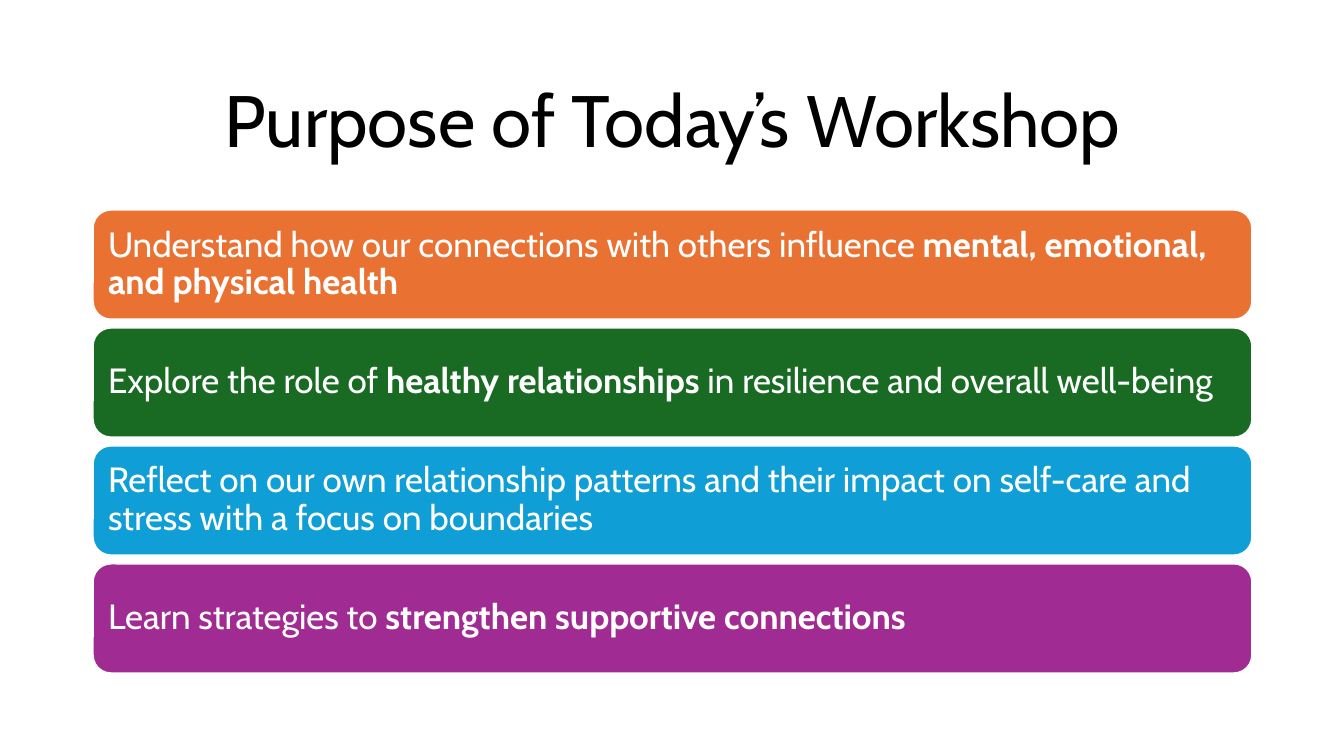
from pptx import Presentation
from pptx.dml.color import RGBColor
from pptx.enum.shapes import MSO_SHAPE
from pptx.enum.text import MSO_ANCHOR, PP_ALIGN
from pptx.util import Pt

PX = 9144  # 100 px to the inch
ROUNDED = MSO_SHAPE.ROUNDED_RECTANGLE
MIDDLE = MSO_ANCHOR.MIDDLE
LEFT, CENTER = PP_ALIGN.LEFT, PP_ALIGN.CENTER
COLORS = {
    "black": "000000",
    "white": "FFFFFF",
    "orange": "E97132",
    "green": "196B24",
    "blue": "0F9ED5",
    "purple": "A02B93",
}
MARGIN, WIDTH = 92, 1150
FIRST_TOP, BAR_HEIGHT, BAR_STEP = 208, 109, 117

# Each purpose: bar colour, then (text, bold) spans
PURPOSES = [
    ("orange", [("Understand how our connections with others influence ", False),
                ("mental, emotional, and physical health", True)]),
    ("green", [("Explore the role of ", False),
               ("healthy relationships", True),
               (" in resilience and overall well-being", False)]),
    ("blue", [("Reflect on our own relationship patterns and their impact on "
               "self-care and stress with a focus on boundaries", False)]),
    ("purple", [("Learn strategies to ", False),
                ("strengthen supportive connections", True)]),
]


def rgb(name):
    return RGBColor.from_string(COLORS[name])


def write_text(box, spans, size, color, align):
    """Fill the box with one paragraph of (text, bold) spans."""
    frame = box.text_frame
    frame.word_wrap = True
    frame.vertical_anchor = MIDDLE
    frame.margin_left = frame.margin_right = 10 * PX
    frame.margin_top = frame.margin_bottom = 5 * PX
    para = frame.paragraphs[0]
    para.alignment = align
    para.line_spacing = 0.9
    for text, bold in spans:
        span = para.add_run()
        span.text = text
        span.font.name = "Cabin"
        span.font.size = Pt(size)
        span.font.bold = bold
        span.font.color.rgb = rgb(color)


deck = Presentation()
deck.slide_width, deck.slide_height = 1333 * PX, 750 * PX
page = deck.slides.add_slide(deck.slide_layouts.get_by_name("Title Only"))

title = page.shapes.title
title.left, title.top = MARGIN * PX, 61 * PX
title.width, title.height = WIDTH * PX, 124 * PX
write_text(title, [("Purpose of Today’s Workshop", False)],
           size=52, color="black", align=CENTER)

for row, (color, spans) in enumerate(PURPOSES):
    top = FIRST_TOP + row * BAR_STEP
    bar = page.shapes.add_shape(ROUNDED, MARGIN * PX, top * PX,
                                WIDTH * PX, BAR_HEIGHT * PX)
    bar.shadow.inherit = False
    bar.fill.solid()
    bar.fill.fore_color.rgb = rgb(color)
    bar.line.color.rgb = rgb("white")
    bar.line.width = Pt(1.5)
    write_text(bar, spans, size=25, color="white", align=LEFT)

deck.save("out.pptx")
